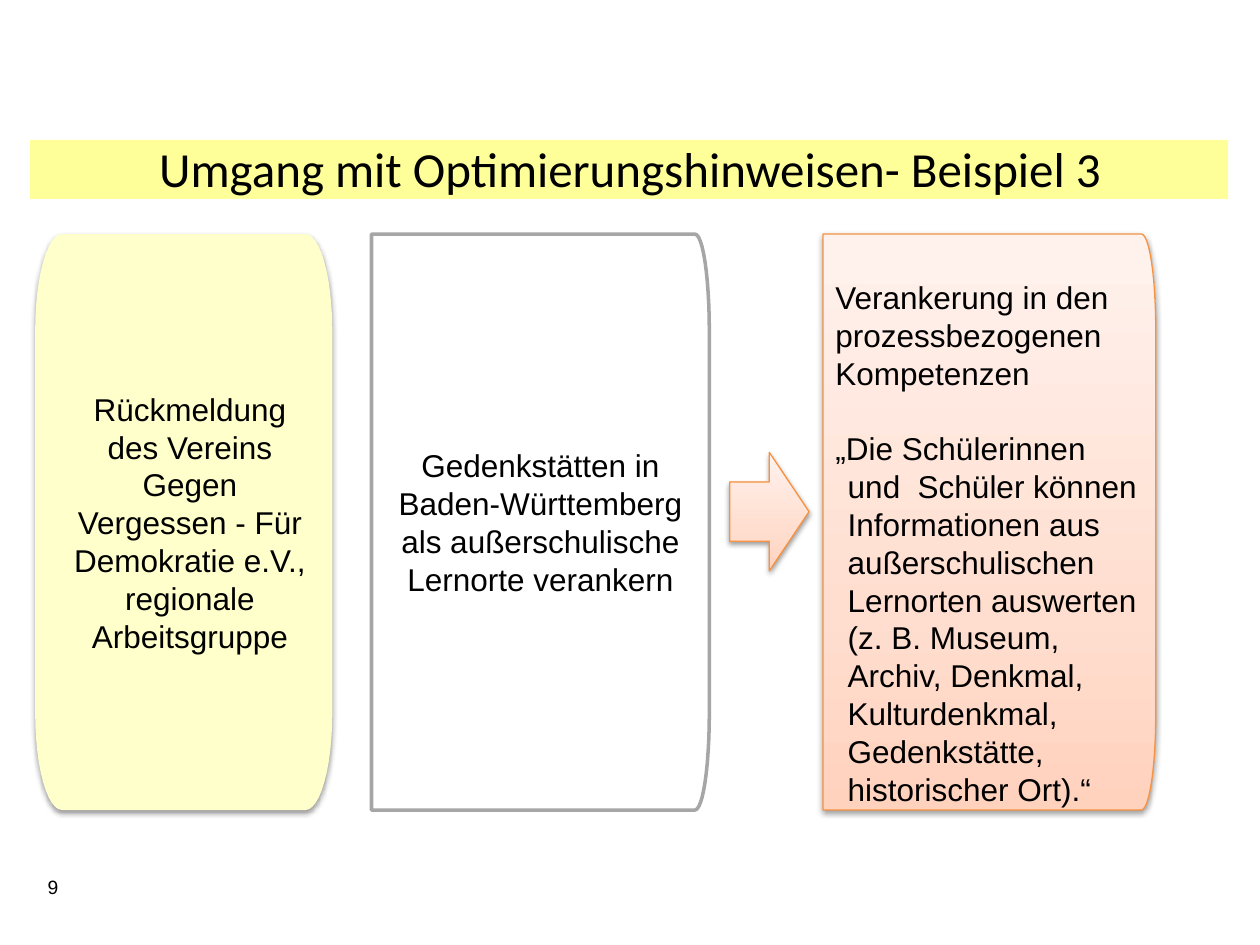
import copy
import math
from dataclasses import dataclass
from typing import Optional

import pptx
import pptx.dml.color
import pptx.enum.shapes
import pptx.enum.text
import pptx.oxml
import pptx.oxml.ns
import pptx.util

Cm = pptx.util.Cm
Pt = pptx.util.Pt
ALIGN = pptx.enum.text.PP_ALIGN
ANCHOR = pptx.enum.text.MSO_ANCHOR
SHAPE = pptx.enum.shapes.MSO_SHAPE


@dataclass(frozen=True)
class Theme:
    ink: str = "000000"
    band: str = "FFFF99"
    feedback: str = "FFFFCC"
    paper: str = "FFFFFF"
    gray: str = "A6A6A6"
    orange: str = "F69240"
    peach: tuple = ((0, "FFD2BD"), (0.35, "FFDED0"), (1, "FFF2ED"))
    body_font: str = "Arial"
    title_font: str = "Calibri"
    title: float = 28
    body: float = 18
    number: float = 11
    leading: float = 21.6


THEME = Theme()


@dataclass(frozen=True)
class Card:
    left: float
    width: float
    radius: float
    fill: object
    paragraphs: tuple
    rounded_left: bool = False
    line: Optional[str] = None
    line_width: float = 0.75
    shadow: bool = True
    align: ALIGN = ALIGN.CENTER
    anchor: ANCHOR = ANCHOR.MIDDLE
    insets: tuple = (0.25, 0.13, 0.25, 0.13)
    indent: float = 0
    first_line: float = 0


CARD_TOP, CARD_HEIGHT, CORNER_HEIGHT = 4.72, 11.61, 1.94
ARC_STEPS = 12

CARDS = (
    Card(0.71, 5.99, 0.54, THEME.feedback,
         ("Rückmeldung des Vereins Gegen Vergessen - Für Demokratie e.V., "
          "regionale Arbeitsgruppe",),
         rounded_left=True, insets=(0.38, 0.28, 0.38, 0.28), indent=0.25),
    Card(16.59, 6.71, 0.29, THEME.peach,
         ("Verankerung in den", "prozessbezogenen", "Kompetenzen",
          "„Die Schülerinnen und  Schüler können Informationen aus "
          "außerschulischen Lernorten auswerten (z. B. Museum, Archiv, Denkmal, "
          "Kulturdenkmal, Gedenkstätte, historischer Ort).“"),
         line=THEME.orange, align=ALIGN.LEFT, anchor=ANCHOR.TOP,
         insets=(0.25, 0.89, 0.25, 0.13), indent=0.25, first_line=-0.25),
    Card(7.49, 6.81, 0.29, THEME.paper,
         ("Gedenkstätten in Baden-Württemberg als außerschulische "
          "Lernorte verankern",),
         line=THEME.gray, line_width=2, shadow=False,
         insets=(0.3, 0.2, 0.3, 0.2)),
)


def rgb(value: str):
    return pptx.dml.color.RGBColor.from_string(value)


def add_text(tf, text: str, *, size: float, font: str = THEME.body_font,
             align=ALIGN.LEFT, first: bool = True, leading=None,
             before: float = 0, indent: float = 0, first_line: float = 0):
    p = tf.paragraphs[0] if first else tf.add_paragraph()
    p.alignment = align
    if leading:
        p.line_spacing = Pt(leading)
    if before:
        p.space_before = Pt(before)
    if indent:
        pPr = p._p.get_or_add_pPr()
        pPr.set("marL", str(Cm(indent)))
        pPr.set("indent", str(Cm(first_line)))
    r = p.add_run()
    r.text = text
    r.font.name = font
    r.font.size = Pt(size)
    r.font.color.rgb = rgb(THEME.ink)


def style(sp, fill, line: Optional[str] = None, width: float = 0.75,
          shadow: bool = False) -> None:
    if isinstance(fill, str):
        sp.fill.solid()
        sp.fill.fore_color.rgb = rgb(fill)
    else:
        sp.fill.gradient()
        sp.fill.gradient_angle = 90
        stops = sp._element.spPr.find(".//" + pptx.oxml.ns.qn("a:gsLst"))
        stops.append(copy.deepcopy(stops[0]))
        for stop, (position, color) in zip(sp.fill.gradient_stops, fill):
            stop.position = position
            stop.color.rgb = rgb(color)
    if line:
        sp.line.color.rgb = rgb(line)
        sp.line.width = Pt(width)
    else:
        sp.line.fill.background()
    sp.shadow.inherit = False
    if shadow:
        effects = sp._element.spPr.find(pptx.oxml.ns.qn("a:effectLst"))
        effects.append(pptx.oxml.parse_xml(
            f'<a:outerShdw {pptx.oxml.ns.nsdecls("a")} blurRad="{Pt(3.1)}" '
            f'dist="{Pt(1.6)}" dir="5400000" rotWithShape="0">'
            '<a:srgbClr val="000000"><a:alpha val="38000"/></a:srgbClr>'
            '</a:outerShdw>'))


def corner(cx: float, cy: float, rx: float, start: int) -> list:
    angles = [math.radians(start + 90 * i / ARC_STEPS) for i in range(ARC_STEPS + 1)]
    return [(Cm(cx + rx * math.cos(a)), Cm(cy + CORNER_HEIGHT * math.sin(a)))
            for a in angles]


def outline(card: Card) -> list:
    right, bottom = card.left + card.width, CARD_TOP + CARD_HEIGHT
    upper, lower = CARD_TOP + CORNER_HEIGHT, bottom - CORNER_HEIGHT
    points = corner(right - card.radius, upper, card.radius, 270)
    points += corner(right - card.radius, lower, card.radius, 0)
    if card.rounded_left:
        points += corner(card.left + card.radius, lower, card.radius, 90)
        points += corner(card.left + card.radius, upper, card.radius, 180)
    else:
        points += [(Cm(card.left), Cm(bottom)), (Cm(card.left), Cm(CARD_TOP))]
    return points


def add_card(s, card: Card) -> None:
    points = outline(card)
    builder = s.shapes.build_freeform(*points[0])
    builder.add_line_segments(points[1:], close=True)
    sp = builder.convert_to_shape()
    style(sp, card.fill, card.line, card.line_width, card.shadow)
    tf = sp.text_frame
    tf.word_wrap = True
    tf.vertical_anchor = card.anchor
    tf.margin_left, tf.margin_top, tf.margin_right, tf.margin_bottom = map(Cm, card.insets)
    for i, text in enumerate(card.paragraphs):
        add_text(tf, text, size=THEME.body, align=card.align, first=i == 0,
                 leading=THEME.leading, before=THEME.leading if i == 3 else 0,
                 indent=card.indent, first_line=card.first_line)


def add_label(s, box: tuple, text: str, **fmt) -> None:
    tf = s.shapes.add_textbox(*map(Cm, box)).text_frame
    tf.word_wrap = True
    add_text(tf, text, **fmt)


def main() -> None:
    prs = pptx.Presentation()
    prs.slide_width, prs.slide_height = Cm(25.4), Cm(19.05)
    s = prs.slides.add_slide(prs.slide_layouts[6])

    band = s.shapes.add_shape(SHAPE.RECTANGLE, Cm(0.61), Cm(2.82), Cm(24.15), Cm(1.19))
    style(band, THEME.band)
    add_label(s, (0.71, 17.53, 1.4, 0.74), "9", size=THEME.number)
    add_label(s, (0, 2.67, 25.4, 2.64), "Umgang mit Optimierungshinweisen- Beispiel 3",
              size=THEME.title, font=THEME.title_font, align=ALIGN.CENTER)
    for card in CARDS:
        add_card(s, card)
    arrow = s.shapes.add_shape(SHAPE.RIGHT_ARROW, Cm(14.71), Cm(9.12), Cm(1.6), Cm(2.39))
    style(arrow, THEME.peach, THEME.orange, shadow=True)

    prs.save("out.pptx")


if __name__ == "__main__":
    main()
